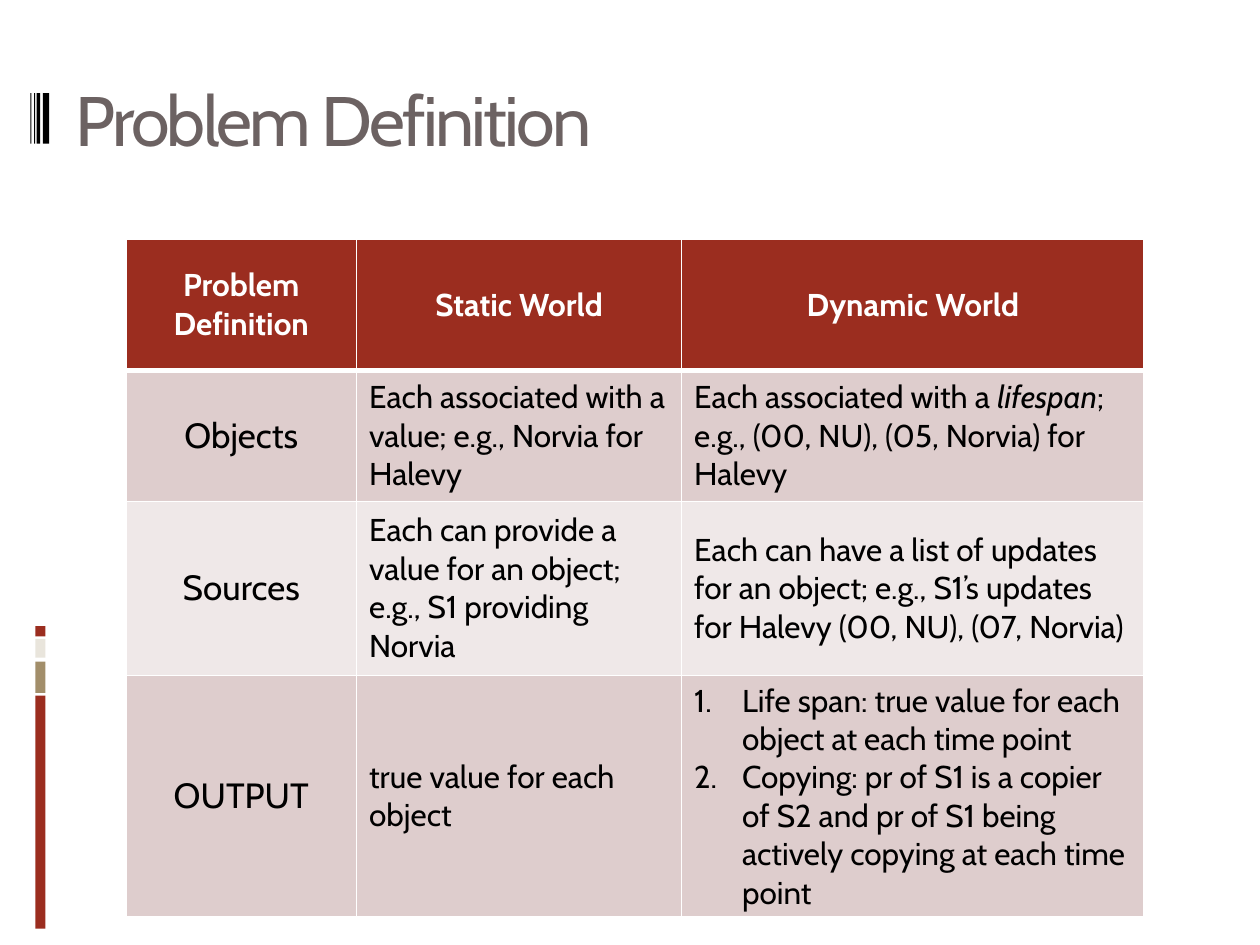
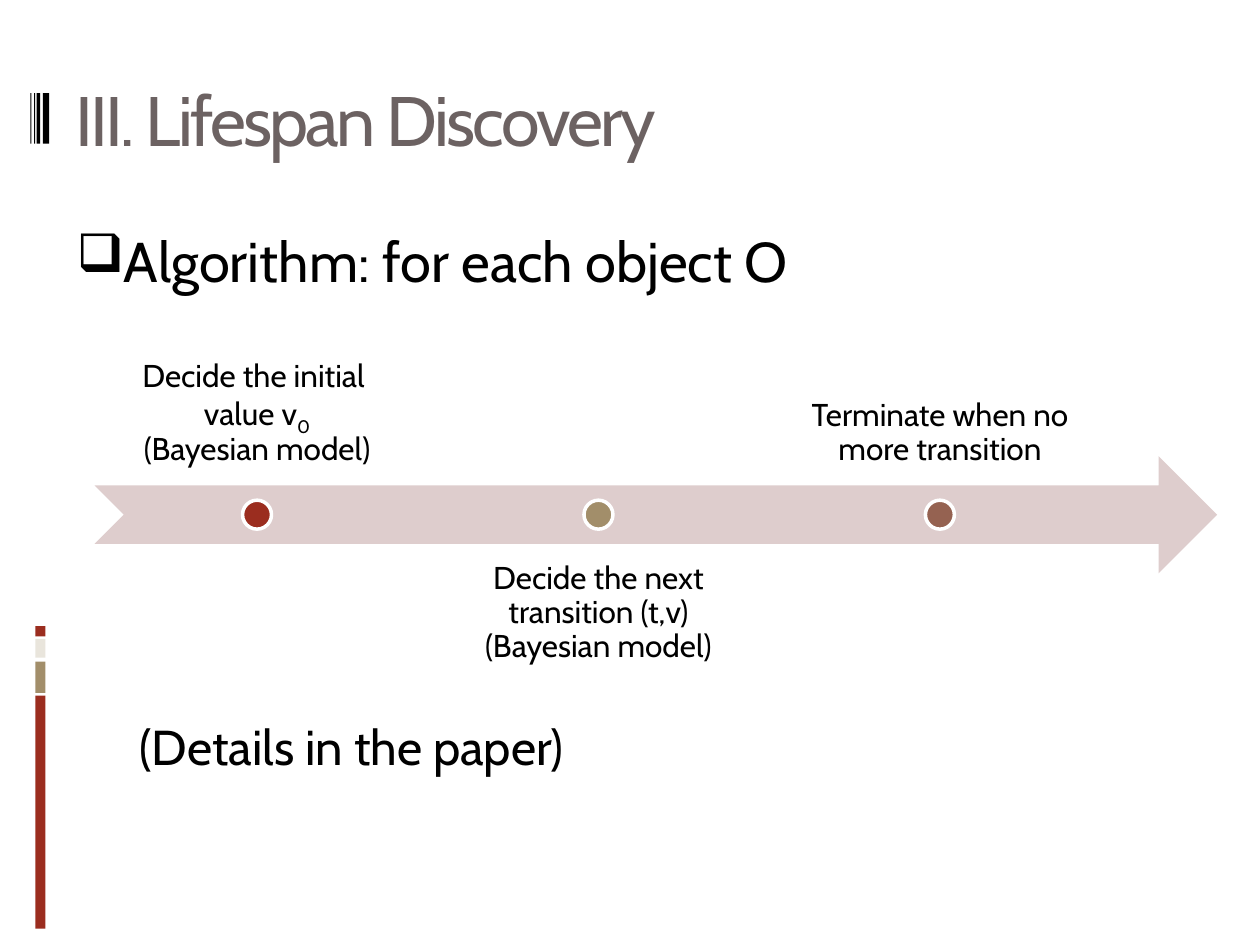
from typing import NamedTuple, Optional, Sequence, Union

from lxml import etree
from pptx import Presentation
from pptx import util as u
from pptx.dml import color as dml
from pptx.enum import shapes, text
from pptx.oxml import ns

FONT = "Cabin"
RED, TAN, BROWN, CREAM = "9B2D1F", "A28E6A", "956251", "E9E5DC"
BLACK, WHITE, GREY = "000000", "FFFFFF", "6C6262"
ROSE, PALE_ROSE = "DECDCD", "EFE8E8"
CENTER, LEFT = text.PP_ALIGN.CENTER, text.PP_ALIGN.LEFT
TOP, MIDDLE, BOTTOM = text.MSO_ANCHOR.TOP, text.MSO_ANCHOR.MIDDLE, text.MSO_ANCHOR.BOTTOM
RECT = shapes.MSO_SHAPE.RECTANGLE


class Run(NamedTuple):
    """A stretch of text with its own slant or baseline."""
    words: str
    italic: bool = False
    baseline: int = 0


class Box(NamedTuple):
    """A rectangle in inches."""
    left: float
    top: float
    width: float
    height: float


class Bar(NamedTuple):
    """A filled strip of the slide edge."""
    box: Box
    fill: str


class Step(NamedTuple):
    """A stop on the timeline with its label."""
    runs: Sequence[Run]
    fill: str
    above: bool


Content = Union[str, Sequence[Run]]

BARS = [
    Bar(Box(0.28, 5.52, 0.08, 1.85), RED),
    Bar(Box(0.28, 5.25, 0.08, 0.25), TAN),
    Bar(Box(0.28, 5.07, 0.08, 0.15), CREAM),
    Bar(Box(0.28, 4.97, 0.08, 0.08), RED),
] + [Bar(Box(x, 0.74, w, 0.4), BLACK)
     for x, w in ((0.34, 0.05), (0.29, 0.03), (0.27, 0.01), (0.24, 0.01))]

COLUMNS = [1.83, 2.58, 3.67]
ROWS = [1.04, 1.04, 1.38, 1.92]
CELLS: list[list[list[Content]]] = [
    [["Problem Definition"], ["Static World"], ["Dynamic World"]],
    [["Objects"],
     ["Each associated with a value; e.g., Norvia for Halevy"],
     [[Run("Each associated with a "), Run("lifespan", italic=True),
       Run("; e.g., (00, NU), (05, Norvia) for Halevy")]]],
    [["Sources"],
     ["Each can provide a value for an object; e.g., S1 providing Norvia"],
     ["Each can have a list of updates for an object; e.g., S1’s updates "
      "for Halevy (00, NU), (07, Norvia)"]],
    [["OUTPUT"],
     ["true value for each object"],
     ["Life span: true value for each object at each time point",
      "Copying: pr of S1 is a copier of S2 and pr of S1 being actively "
      "copying at each time point"]],
]

STEPS = [
    Step([Run("Decide the initial \nvalue v"), Run("0\n", baseline=-25000),
          Run("(Bayesian model)")], RED, True),
    Step([Run("Decide the next transition (t,v)\n(Bayesian model)")], TAN, False),
    Step([Run("Terminate when no more transition")], BROWN, True),
]
STEP_LEFT, STEP_GAP, STEP_WIDTH = 0.75, 2.71, 2.58
ARROW = Box(0.75, 3.62, 8.91, 0.93)
DOT = 0.23


def rgb(value: str) -> dml.RGBColor:
    """Turn a hex string into a colour."""
    return dml.RGBColor.from_string(value)


def place(box: Box) -> list[int]:
    """Give a box as lengths."""
    return [u.Inches(v) for v in box]


def add_bullet(p, bullet: str, indent: float) -> None:
    """Set a hanging bullet, or numbering when bullet is '1.'."""
    pPr = p._p.get_or_add_pPr()
    pPr.set("marL", str(u.Inches(indent)))
    pPr.set("indent", str(-u.Inches(indent)))
    if bullet == "1.":
        etree.SubElement(pPr, ns.qn("a:buAutoNum"), type="arabicPeriod")
    else:
        etree.SubElement(pPr, ns.qn("a:buSzPct"), val="95000")
        etree.SubElement(pPr, ns.qn("a:buChar"), char=bullet)


def write(tf, paragraphs: Sequence[Content], *, size: float, color: str = BLACK,
          bold: bool = False, align=LEFT, anchor=TOP, leading: Optional[float] = None,
          tracking: int = 0, inset: Optional[float] = None, bullet: str = "",
          indent: float = 0) -> None:
    """Fill a text frame with formatted paragraphs."""
    tf.word_wrap = True
    tf.vertical_anchor = anchor
    if inset is not None:
        tf.margin_left = tf.margin_right = tf.margin_top = tf.margin_bottom = u.Inches(inset)
    for i, content in enumerate(paragraphs):
        p = tf.add_paragraph() if i else tf.paragraphs[0]
        p.alignment = align
        if leading:
            p.line_spacing = leading
        if bullet:
            add_bullet(p, bullet, indent)
        for part in [Run(content)] if isinstance(content, str) else content:
            for j, line in enumerate(part.words.split("\n")):
                if j:
                    p.add_line_break()
                if not line:
                    continue
                r = p.add_run()
                r.text = line
                r.font.name, r.font.size = FONT, u.Pt(size)
                r.font.bold, r.font.italic = bold, part.italic
                r.font.color.rgb = rgb(color)
                rPr = r._r.get_or_add_rPr()
                if part.baseline:
                    rPr.set("baseline", str(part.baseline))
                if tracking:
                    rPr.set("spc", str(tracking))


def add_text(s, box: Box, paragraphs: Sequence[Content], **style) -> None:
    """Add a text box."""
    write(s.shapes.add_textbox(*place(box)).text_frame, paragraphs, **style)


def add_shape(s, kind, box: Box, fill: str, line: str = "") -> None:
    """Add a flat preset shape."""
    sp = s.shapes.add_shape(kind, *place(box))
    sp.shadow.inherit = False
    sp.fill.solid()
    sp.fill.fore_color.rgb = rgb(fill)
    if line:
        sp.line.color.rgb = rgb(line)
        sp.line.width = u.Pt(2)
    else:
        sp.line.fill.background()


def add_slide(prs, title: str):
    """Start a slide with the edge bars and title."""
    s = prs.slides.add_slide(prs.slide_layouts[6])
    for bar in BARS:
        add_shape(s, RECT, bar.box, bar.fill)
    add_text(s, Box(0.5, 0.23, 9, 1.42), [title], size=40, color=GREY,
             anchor=MIDDLE, tracking=-150)
    return s


def add_borders(cell, top: float, bottom: float) -> None:
    """Draw white borders around a cell."""
    tcPr = cell._tc.get_or_add_tcPr()
    for side, width in (("L", 1), ("R", 1), ("T", top), ("B", bottom)):
        ln = etree.SubElement(tcPr, ns.qn(f"a:ln{side}"), w=str(u.Pt(width)))
        fill = etree.SubElement(ln, ns.qn("a:solidFill"))
        etree.SubElement(fill, ns.qn("a:srgbClr"), val=WHITE)


def add_definition_table(s) -> None:
    """Compare the static and dynamic worlds in a table."""
    box = Box(1, 1.9, sum(COLUMNS), sum(ROWS))
    table = s.shapes.add_table(len(ROWS), len(COLUMNS), *place(box)).table
    for column, width in zip(table.columns, COLUMNS):
        column.width = u.Inches(width)
    for i, (row, height) in enumerate(zip(table.rows, ROWS)):
        row.height = u.Inches(height)
        header = i == 0
        for j, (cell, paragraphs) in enumerate(zip(row.cells, CELLS[i])):
            add_borders(cell, top=3 if i == 1 else 1, bottom=3 if header else 1)
            cell.fill.solid()
            cell.fill.fore_color.rgb = rgb(RED if header else ROSE if i % 2 else PALE_ROSE)
            cell.vertical_anchor = MIDDLE
            write(cell.text_frame, paragraphs, size=20 if j == 0 and not header else 18,
                  color=WHITE if header else BLACK, bold=header, anchor=MIDDLE,
                  align=CENTER if header or j == 0 else LEFT,
                  bullet="1." if len(paragraphs) > 1 else "", indent=0.38)


def add_timeline(s) -> None:
    """Draw the arrow with its steps."""
    add_shape(s, shapes.MSO_SHAPE.NOTCHED_RIGHT_ARROW, ARROW, ROSE)
    for i, step in enumerate(STEPS):
        left = STEP_LEFT + i * STEP_GAP
        label = Box(left, 2.92 if step.above else 4.32, STEP_WIDTH, 0.93)
        add_text(s, label, [step.runs], size=18, align=CENTER, leading=0.9,
                 anchor=BOTTOM if step.above else TOP, inset=0.14)
        dot = Box(left + (STEP_WIDTH - DOT) / 2, ARROW.top + (ARROW.height - DOT) / 2, DOT, DOT)
        add_shape(s, shapes.MSO_SHAPE.OVAL, dot, step.fill, line=WHITE)


def main() -> None:
    """Build the deck."""
    prs = Presentation()
    prs.slide_width, prs.slide_height = u.Inches(10), u.Inches(7.5)
    add_definition_table(add_slide(prs, "Problem Definition"))
    s = add_slide(prs, "III. Lifespan Discovery")
    add_text(s, Box(0.51, 1.75, 9.49, 0.7), ["Algorithm: for each object O"], size=32, bullet="❑")
    add_text(s, Box(1.01, 5.64, 8.99, 0.6), ["(Details in the paper)"], size=28)
    add_timeline(s)
    prs.save("out.pptx")


if __name__ == "__main__":
    main()
